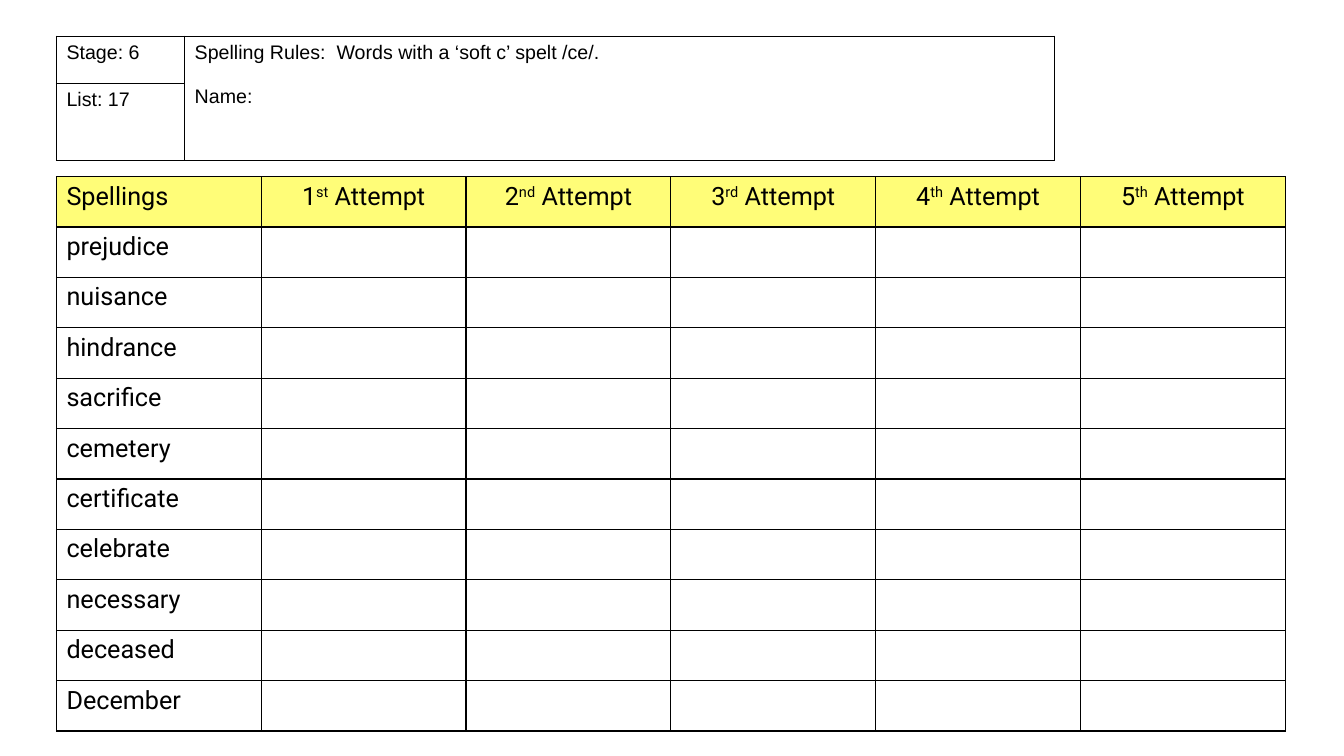
"""Build a spelling practice sheet with a heading table and an attempts table."""
from dataclasses import dataclass

from lxml import etree
from pptx import Presentation
from pptx.dml.color import RGBColor
from pptx.enum.text import PP_ALIGN
from pptx.oxml.ns import qn
from pptx.table import Table, _Cell
from pptx.util import Pt

LEFT = PP_ALIGN.LEFT
CENTER = PP_ALIGN.CENTER
BLACK = RGBColor(0x00, 0x00, 0x00)
YELLOW = RGBColor(0xFF, 0xFD, 0x78)
BLANK_LAYOUT = 6
SUPERSCRIPT = "30000"
BORDER_SIDES = ("a:lnL", "a:lnR", "a:lnT", "a:lnB")

WORDS = (
    "prejudice", "nuisance", "hindrance", "sacrifice", "cemetery",
    "certificate", "celebrate", "necessary", "deceased", "December",
)
ORDINALS = ("st", "nd", "rd", "th", "th")


@dataclass(frozen=True)
class Grid:
    """Position and track sizes of a table, in points."""

    left: float
    top: float
    widths: tuple[float, ...]
    heights: tuple[float, ...]


HEADING = Grid(40.32, 25.92, (91.6, 621.4), (34, 54.5))
ATTEMPTS = Grid(40.32, 126.2, (146.3,) * 6, (36,) * (len(WORDS) + 1))


def add_border(cell: _Cell) -> None:
    """Draw a thin black line on each side of a cell."""
    properties = cell._tc.get_or_add_tcPr()
    for side in BORDER_SIDES:
        line = etree.SubElement(properties, qn(side), w=str(Pt(1)))
        fill = etree.SubElement(line, qn("a:solidFill"))
        etree.SubElement(fill, qn("a:srgbClr"), val=str(BLACK))


def add_grid(page, grid: Grid) -> Table:
    """Add an unfilled, bordered table laid out by a grid."""
    frame = page.shapes.add_table(
        len(grid.heights), len(grid.widths), Pt(grid.left), Pt(grid.top),
        Pt(sum(grid.widths)), Pt(sum(grid.heights)),
    )
    table = frame.table
    table.first_row = False
    table.horz_banding = False
    for column, width in zip(table.columns, grid.widths):
        column.width = Pt(width)
    for row, height in zip(table.rows, grid.heights):
        row.height = Pt(height)
    for cell in table.iter_cells():
        add_border(cell)
        cell.fill.background()
    return table


def write(para, text: str, *, font: str, size: float, align=LEFT,
          raised: bool = False, space_before: float = 0) -> None:
    """Add a formatted span of text to a paragraph."""
    para.alignment = align
    if space_before:
        para.space_before = Pt(space_before)
    span = para.add_run()
    span.text = text
    span.font.name = font
    span.font.size = Pt(size)
    span.font.color.rgb = BLACK
    if raised:
        span._r.get_or_add_rPr().set("baseline", SUPERSCRIPT)


def add_attempts(page) -> None:
    """Add the word list with five attempt columns."""
    table = add_grid(page, ATTEMPTS)
    style = {"font": "Roboto", "size": 18}
    for row, word in enumerate(("Spellings",) + WORDS):
        write(table.cell(row, 0).text_frame.paragraphs[0], word, **style)
    for number, ordinal in enumerate(ORDINALS, start=1):
        para = table.cell(0, number).text_frame.paragraphs[0]
        for text in (str(number), ordinal, " Attempt"):
            write(para, text, align=CENTER, raised=text == ordinal, **style)
    for cell in table.rows[0].cells:
        cell.fill.solid()
        cell.fill.fore_color.rgb = YELLOW


def add_heading(page) -> None:
    """Add the stage, list, rule and name table."""
    table = add_grid(page, HEADING)
    style = {"font": "Arial", "size": 14}
    for row, text in enumerate(("Stage: 6", "List: 17")):
        write(table.cell(row, 0).text_frame.paragraphs[0], text, **style)
    rule = table.cell(0, 1)
    rule.merge(table.cell(1, 1))
    write(rule.text_frame.paragraphs[0],
          "Spelling Rules:  Words with a ‘soft c’ spelt /ce/.", **style)
    write(rule.text_frame.add_paragraph(), "Name:", space_before=16, **style)


def main() -> None:
    """Create and save the deck."""
    deck = Presentation()
    deck.slide_width = Pt(960)
    deck.slide_height = Pt(540)
    page = deck.slides.add_slide(deck.slide_layouts[BLANK_LAYOUT])
    add_attempts(page)
    add_heading(page)
    deck.save("out.pptx")


if __name__ == "__main__":
    main()
